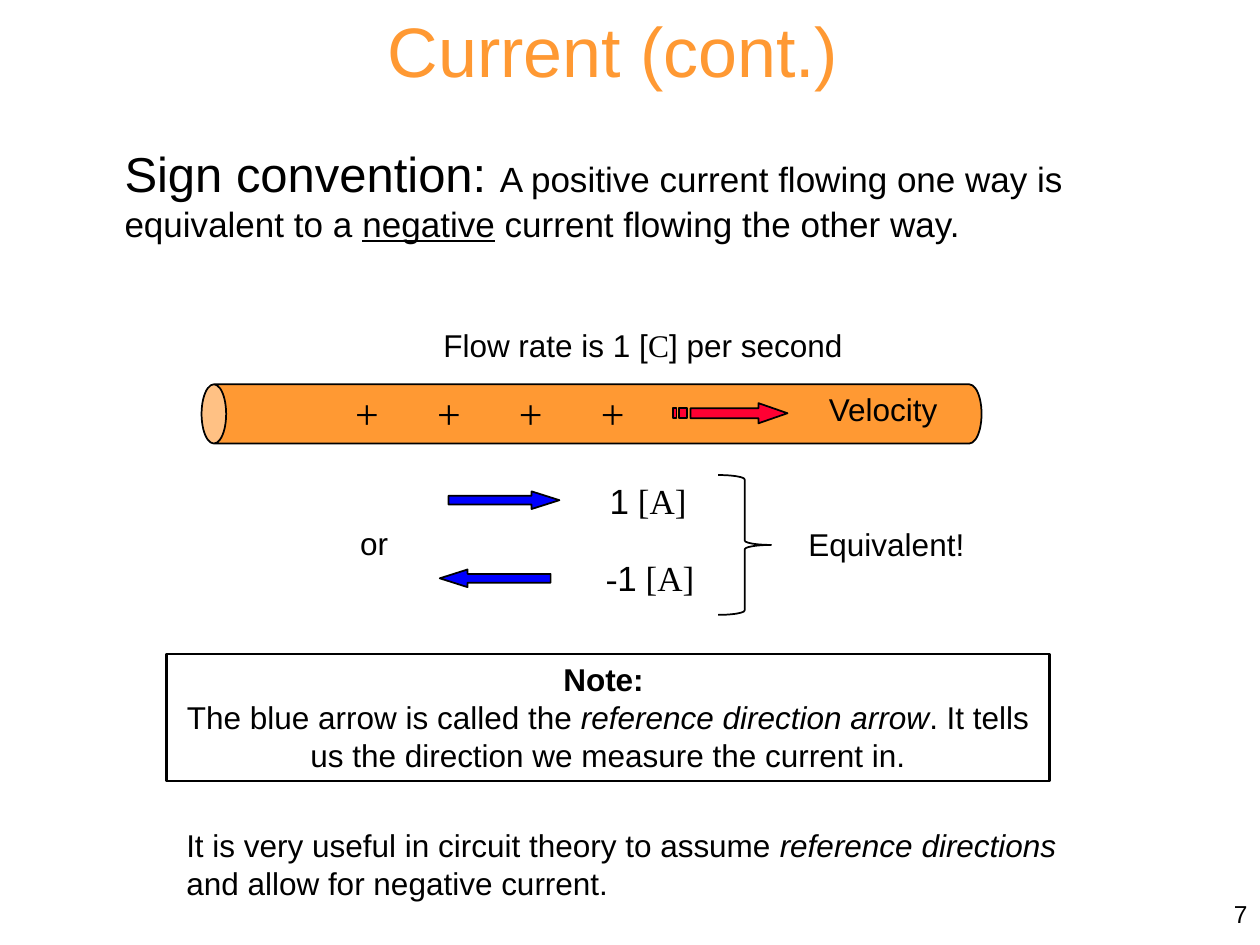
from dataclasses import dataclass

from pptx import Presentation
from pptx.dml.color import RGBColor
from pptx.enum.shapes import MSO_SHAPE
from pptx.enum.text import MSO_ANCHOR, MSO_AUTO_SIZE, PP_ALIGN
from pptx.util import Inches, Pt

LEFT, CENTER, RIGHT = PP_ALIGN.LEFT, PP_ALIGN.CENTER, PP_ALIGN.RIGHT
TOP, MIDDLE = MSO_ANCHOR.TOP, MSO_ANCHOR.MIDDLE
GROW, FIXED = MSO_AUTO_SIZE.SHAPE_TO_FIT_TEXT, MSO_AUTO_SIZE.NONE
CAN, BRACE, BOX = MSO_SHAPE.CAN, MSO_SHAPE.RIGHT_BRACE, MSO_SHAPE.RECTANGLE
LEFT_ARROW, RIGHT_ARROW = MSO_SHAPE.LEFT_ARROW, MSO_SHAPE.RIGHT_ARROW
SANS, SERIF = "Arial", "Times New Roman"
BLACK, ORANGE, BLUE, RED = "000000", "FF9933", "0000FF", "FF0033"
Area = tuple[float, float, float, float]


@dataclass(frozen=True)
class Run:
    text: str
    size: float = 18
    face: str = SANS
    color: str = BLACK
    bold: bool = False
    italic: bool = False
    underline: bool = False


@dataclass(frozen=True)
class Label:
    area: Area
    paragraphs: list[list[Run]]
    align: PP_ALIGN = LEFT
    wrap: bool = False
    anchor: MSO_ANCHOR = TOP
    auto_size: MSO_AUTO_SIZE = GROW


@dataclass(frozen=True)
class Figure:
    kind: MSO_SHAPE
    area: Area
    fill: str = ""
    adjustments: tuple[float, ...] = ()
    rotation: float = 0
    line_width: float = 1


def paint(color_holder, color: str) -> None:
    color_holder.rgb = RGBColor.from_string(color)


def write(shape, label: Label) -> None:
    frame = shape.text_frame
    frame_format = {
        "word_wrap": label.wrap,
        "auto_size": label.auto_size,
        "vertical_anchor": label.anchor,
    }
    for name, value in frame_format.items():
        setattr(frame, name, value)
    for index, runs in enumerate(label.paragraphs):
        paragraph = frame.add_paragraph() if index else frame.paragraphs[0]
        paragraph.alignment = label.align
        for run in runs:
            piece = paragraph.add_run()
            piece.text = run.text
            font_format = {
                "size": Pt(run.size),
                "name": run.face,
                "bold": run.bold,
                "italic": run.italic,
                "underline": run.underline,
            }
            for name, value in font_format.items():
                setattr(piece.font, name, value)
            paint(piece.font.color, run.color)


def draw_label(slide, label: Label) -> None:
    write(slide.shapes.add_textbox(*map(Inches, label.area)), label)


def style(shape, fill: str, line_width: float) -> None:
    shape.shadow.inherit = False
    if fill:
        shape.fill.solid()
        paint(shape.fill.fore_color, fill)
    else:
        shape.fill.background()
    paint(shape.line.color, BLACK)
    shape.line.width = Pt(line_width)


def draw_figure(slide, figure: Figure):
    shape = slide.shapes.add_shape(figure.kind, *map(Inches, figure.area))
    for index, value in enumerate(figure.adjustments):
        shape.adjustments[index] = value
    shape.rotation = figure.rotation
    style(shape, figure.fill, figure.line_width)
    return shape


def draw_velocity_arrow(slide) -> None:
    head = [(6.02, 3.2), (6.02, 3.24), (5.48, 3.24), (5.48, 3.32),
            (6.02, 3.32), (6.02, 3.36), (6.25, 3.28)]
    stripes = [[(left, 3.24), (left, 3.32), (right, 3.32), (right, 3.24)]
               for left, right in ((5.39, 5.45), (5.34, 5.37))]
    outlines = [[(Inches(x), Inches(y)) for x, y in outline]
                for outline in (head, *stripes)]
    builder = slide.shapes.build_freeform(*outlines[0][0])
    for outline in outlines:
        if outline is not outlines[0]:
            builder.move_to(*outline[0])
        builder.add_line_segments(outline[1:], close=True)
    style(builder.convert_to_shape(), RED, 1)


def main() -> None:
    deck = Presentation()
    deck.slide_width, deck.slide_height = Inches(10), Inches(7.5)
    slide = deck.slides.add_slide(deck.slide_layouts[5])

    heading = Label((2.97, 0.01, 3.79, 0.77),
                    [[Run("Current (cont.)", 40, color=ORANGE)]], CENTER, True)
    title = slide.shapes.title
    for name, value in zip(("left", "top", "width", "height"), heading.area):
        setattr(title, name, Inches(value))
    write(title, heading)

    figures = [
        Figure(CAN, (4.46, 0.19, 0.47, 6.19), ORANGE, (0.415,), 270),
        Figure(RIGHT_ARROW, (3.56, 3.9, 0.88, 0.14), BLUE, (0.5, 1.575)),
        Figure(LEFT_ARROW, (3.49, 4.52, 0.88, 0.14), BLUE, (0.5, 1.575)),
        Figure(BRACE, (5.7, 3.77, 0.42, 1.11)),
    ]
    for figure in figures:
        draw_figure(slide, figure)
    draw_velocity_arrow(slide)

    charges = [Label((2.72 + 0.65 * index, 3.03, 0.39, 0.5), [[Run("+", 24, SERIF)]])
               for index in range(4)]
    labels = [
        Label((0.89, 1.09, 7.86, 0.9), [[
            Run("Sign convention: ", 28),
            Run("A positive current flowing one way is equivalent to a ", 20),
            Run("negative", 20, underline=True),
            Run(" current flowing the other way.", 20),
        ]], wrap=True),
        Label((3.42, 2.54, 3.41, 0.4),
              [[Run("Flow rate is 1 ["), Run("C", face=SERIF), Run("] per second")]]),
        Label((6.48, 3.05, 1.07, 0.4), [[Run("Velocity")]]),
        Label((4.74, 3.76, 0.82, 0.44), [[Run("1", 20), Run(" [A]", 20, SERIF)]]),
        Label((4.71, 4.37, 0.91, 0.44),
              [[Run("-", 20, SERIF), Run("1", 20), Run(" [A]", 20, SERIF)]]),
        Label((2.76, 4.11, 0.42, 0.4), [[Run("or")]]),
        Label((6.31, 4.12, 1.45, 0.4), [[Run("Equivalent!")]], CENTER),
        Label((1.38, 6.51, 7.19, 0.71), [
            [Run("It is very useful in circuit theory to assume "),
             Run("reference directions", italic=True)],
            [Run("and allow for negative current.")],
        ]),
        Label((7.92, 7, 2.08, 0.5), [[Run("7", 14)]], RIGHT, True, MIDDLE, FIXED),
    ]
    for label in charges + labels:
        draw_label(slide, label)

    note = Label((1.32, 5.19, 7.01, 1.01), [
        [Run("Note: ", bold=True)],
        [Run("The blue arrow is called the "),
         Run("reference direction arrow", italic=True),
         Run(". It tells us the direction we measure the current in.")],
    ], CENTER, True)
    write(draw_figure(slide, Figure(BOX, note.area, line_width=1.5)), note)

    deck.save("out.pptx")


if __name__ == "__main__":
    main()
